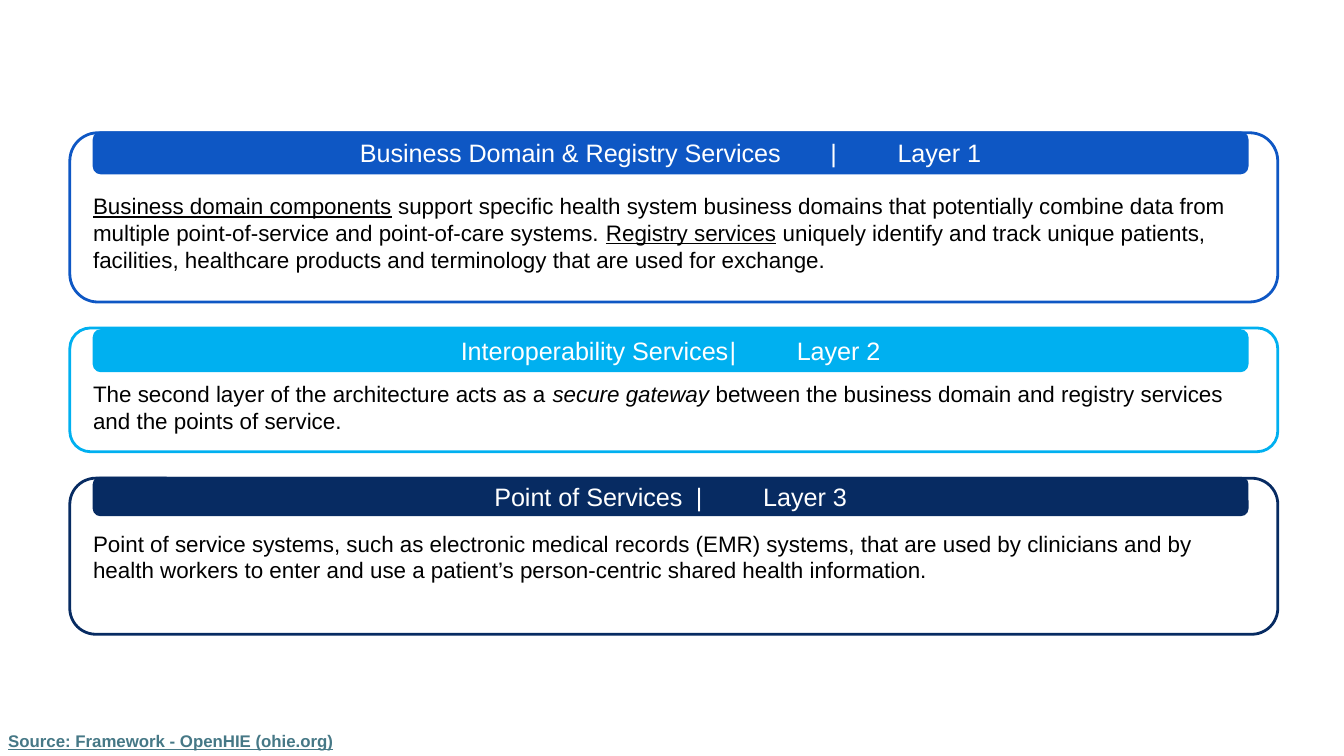
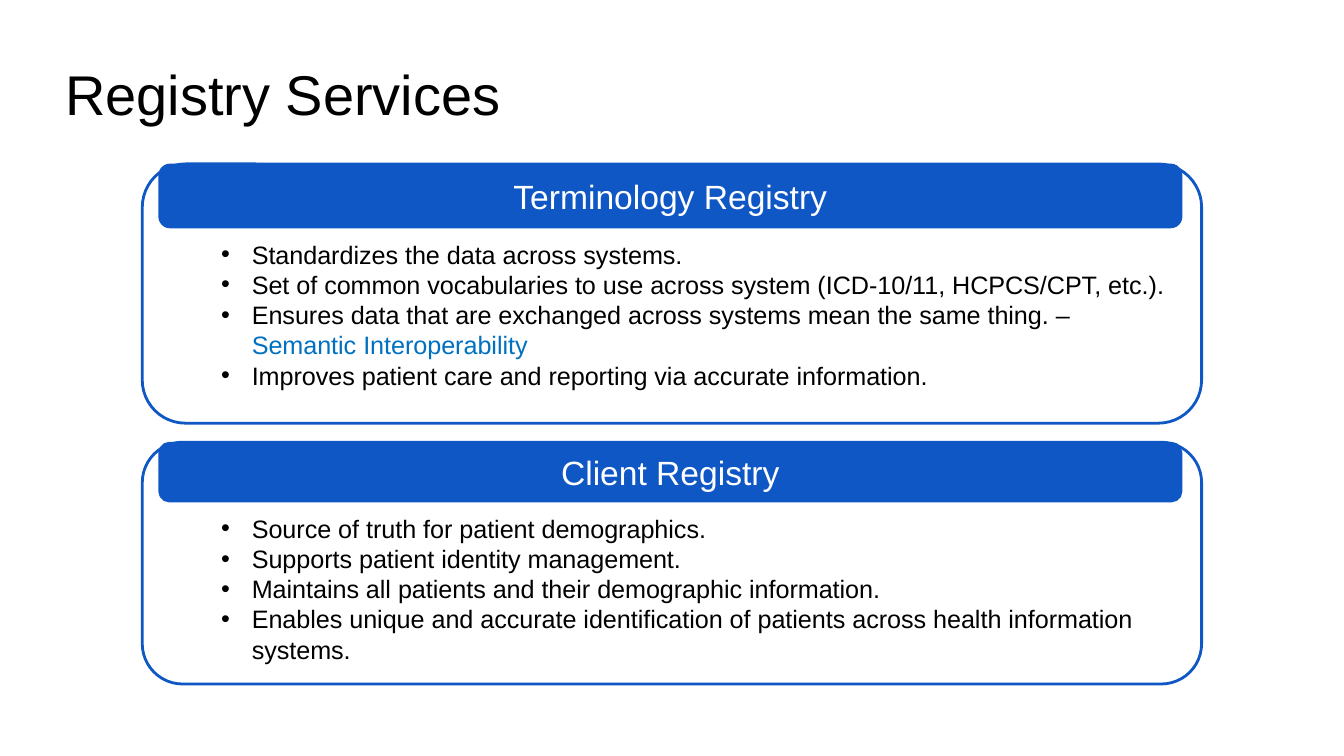
from dataclasses import dataclass

from lxml import etree
from pptx import Presentation
from pptx import util as u
from pptx.dml.color import RGBColor
from pptx.enum import shapes, text
from pptx.oxml import ns


@dataclass(frozen=True)
class Theme:
    font: str = "Arial"
    blue: str = "0E57C4"
    cyan: str = "00B0F0"
    navy: str = "072B62"
    black: str = "000000"
    white: str = "FFFFFF"
    link: str = "467886"
    highlight: str = "0070C0"
    title_size: float = 30
    registry_size: float = 18
    list_size: float = 13.5
    layer_size: float = 13.5
    body_size: float = 12
    source_size: float = 9
    outline: float = 1.5


THEME = Theme()

# A paragraph is a list of runs: (text, format).
# Vertical places are (top, height) in cm.
LAYERS = [
    dict(
        heading="Business Domain & Registry Services\t|\tLayer 1",
        color=THEME.blue,
        frame=(2.51, 3.2), band=(2.51, 0.76), body=(3.53, 1.73),
        paragraphs=[[
            ("Business domain components", {"underline": True}),
            (" support speciﬁc health system business domains that potentially combine data "
             "from multiple point-of-service and point-of-care systems. ", {}),
            ("Registry services", {"underline": True}),
            (" uniquely identify and track unique patients, facilities, healthcare products "
             "and terminology that are used for exchange.", {}),
        ]],
    ),
    dict(
        heading="Interoperability Services\t|\tLayer 2",
        color=THEME.cyan,
        frame=(6.2, 2.34), band=(6.25, 0.76), body=(7.09, 1.22),
        paragraphs=[[
            ("The second layer of the architecture acts as a ", {}),
            ("secure gateway ", {"italic": True}),
            ("between the business domain and registry services and the points of service.", {}),
        ]],
    ),
    dict(
        heading="Point of Services \t|\tLayer 3",
        color=THEME.navy,
        frame=(9.04, 2.95), band=(9.04, 0.69), body=(9.96, 1.12),
        paragraphs=[[
            ("Point of service systems, such as electronic medical records (EMR) systems, that "
             "are used by clinicians and by health workers to enter and use a patient’s "
             "person-centric shared health information.", {}),
        ]],
    ),
]
SOURCE = "Source: Framework - OpenHIE (ohie.org)"

REGISTRY_TITLE = "Registry Services"
REGISTRIES = [
    dict(
        heading="Terminology Registry",
        color=THEME.blue,
        frame=(3.1, 4.9), band=(3.12, 1.17), body=(4.42, 3.07),
        paragraphs=[
            [("Standardizes the data across systems.", {})],
            [("Set of common vocabularies to use across system (ICD-10/11, HCPCS/CPT, etc.).", {})],
            [("Ensures data that are exchanged across systems mean the same thing. – ", {}),
             ("Semantic Interoperability", {"color": THEME.highlight})],
            [("Improves patient care and reporting via accurate information.", {})],
        ],
    ),
    dict(
        heading="Client Registry",
        color=THEME.blue,
        frame=(8.36, 4.57), band=(8.38, 1.09), body=(9.6, 3.15),
        paragraphs=[
            [("Source of truth for patient demographics.", {})],
            [("Supports patient identity management.", {})],
            [("Maintains all patients and their demographic information.", {})],
            [("Enables unique and accurate identification of patients across health "
              "information systems.", {})],
        ],
    ),
]

# Horizontal places are (left, width) in cm, shared by all panels of a slide.
LAYER_COLUMNS = dict(frame=(1.32, 22.83), band=(1.78, 21.79), body=(1.57, 22.35))
REGISTRY_COLUMNS = dict(frame=(2.69, 20.02), band=(3.02, 19.3), body=(3.02, 19.46))


def place(column, row):
    """Combine (left, width) and (top, height) into a box."""
    (left, width), (top, height) = column, row
    return [u.Cm(length) for length in (left, top, width, height)]


def add_bullet(paragraph):
    paragraph.level = 1
    properties = paragraph._p.get_or_add_pPr()
    properties.set("marL", str(u.Cm(1.55)))
    properties.set("indent", str(u.Cm(-0.58)))
    color = etree.SubElement(properties, ns.qn("a:buClr"))
    etree.SubElement(color, ns.qn("a:srgbClr"), val=THEME.black)
    etree.SubElement(properties, ns.qn("a:buFont"), typeface=THEME.font)
    etree.SubElement(properties, ns.qn("a:buChar"), char="•")


def write(shape, paragraphs, size, color=THEME.black, align=text.PP_ALIGN.LEFT,
          anchor=text.MSO_ANCHOR.MIDDLE, grow=False, bullets=False, spacing=None):
    frame = shape.text_frame
    frame.word_wrap = True
    frame.vertical_anchor = anchor
    frame.margin_left = frame.margin_right = u.Cm(0.19)
    frame.margin_top = frame.margin_bottom = u.Cm(0.1)
    if grow:
        frame.auto_size = text.MSO_AUTO_SIZE.SHAPE_TO_FIT_TEXT
    for index, runs in enumerate(paragraphs):
        paragraph = frame.add_paragraph() if index else frame.paragraphs[0]
        paragraph.alignment = align
        if spacing:
            paragraph.line_spacing = spacing
        if bullets:
            add_bullet(paragraph)
        for content, style in runs:
            run = paragraph.add_run()
            run.text = content
            run.font.name = THEME.font
            run.font.size = u.Pt(size)
            run.font.color.rgb = RGBColor.from_string(style.get("color", color))
            for name in ("bold", "italic", "underline"):
                if name in style:
                    setattr(run.font, name, style[name])


def add_rounded(group, box, color, filled=False):
    shape = group.shapes.add_shape(shapes.MSO_SHAPE.ROUNDED_RECTANGLE, *box)
    shape.shadow.inherit = False
    shape.line.color.rgb = RGBColor.from_string(color)
    shape.line.width = u.Pt(THEME.outline)
    if filled:
        shape.fill.solid()
        shape.fill.fore_color.rgb = RGBColor.from_string(color)
    else:
        shape.fill.background()
    return shape


def add_panel(slide, panel, columns, heading_size, **body_format):
    """Draw an outlined panel with a coloured heading band and body text."""
    group = slide.shapes.add_group_shape()
    boxes = {part: place(columns[part], panel[part]) for part in columns}
    add_rounded(group, boxes["frame"], panel["color"])
    band = add_rounded(group, boxes["band"], panel["color"], filled=True)
    write(band, [[(panel["heading"], {})]], heading_size, color=THEME.white,
          align=text.PP_ALIGN.CENTER)
    body = group.shapes.add_textbox(*boxes["body"])
    write(body, panel["paragraphs"], grow=True, **body_format)


def build_layers(slide):
    for layer in LAYERS:
        add_panel(slide, layer, LAYER_COLUMNS, THEME.layer_size, size=THEME.body_size)
    source = slide.shapes.add_textbox(*place((-1.22, 8.89), (13.72, 0.58)))
    write(source, [[(SOURCE, {"bold": True, "underline": True})]], THEME.source_size,
          color=THEME.link, align=text.PP_ALIGN.CENTER, anchor=text.MSO_ANCHOR.TOP, grow=True)


def build_registries(slide):
    title = slide.shapes.add_textbox(*place((1.04, 20.78), (0.28, 3.12)))
    write(title, [[(REGISTRY_TITLE, {})]], THEME.title_size, spacing=0.9)
    for registry in REGISTRIES:
        add_panel(slide, registry, REGISTRY_COLUMNS, THEME.registry_size,
                  size=THEME.list_size, anchor=text.MSO_ANCHOR.TOP, bullets=True)


def main():
    presentation = Presentation()
    presentation.slide_width = u.Cm(25.4)
    presentation.slide_height = u.Cm(14.29)
    blank = presentation.slide_layouts[6]
    for build in (build_layers, build_registries):
        build(presentation.slides.add_slide(blank))
    presentation.save("out.pptx")


if __name__ == "__main__":
    main()
